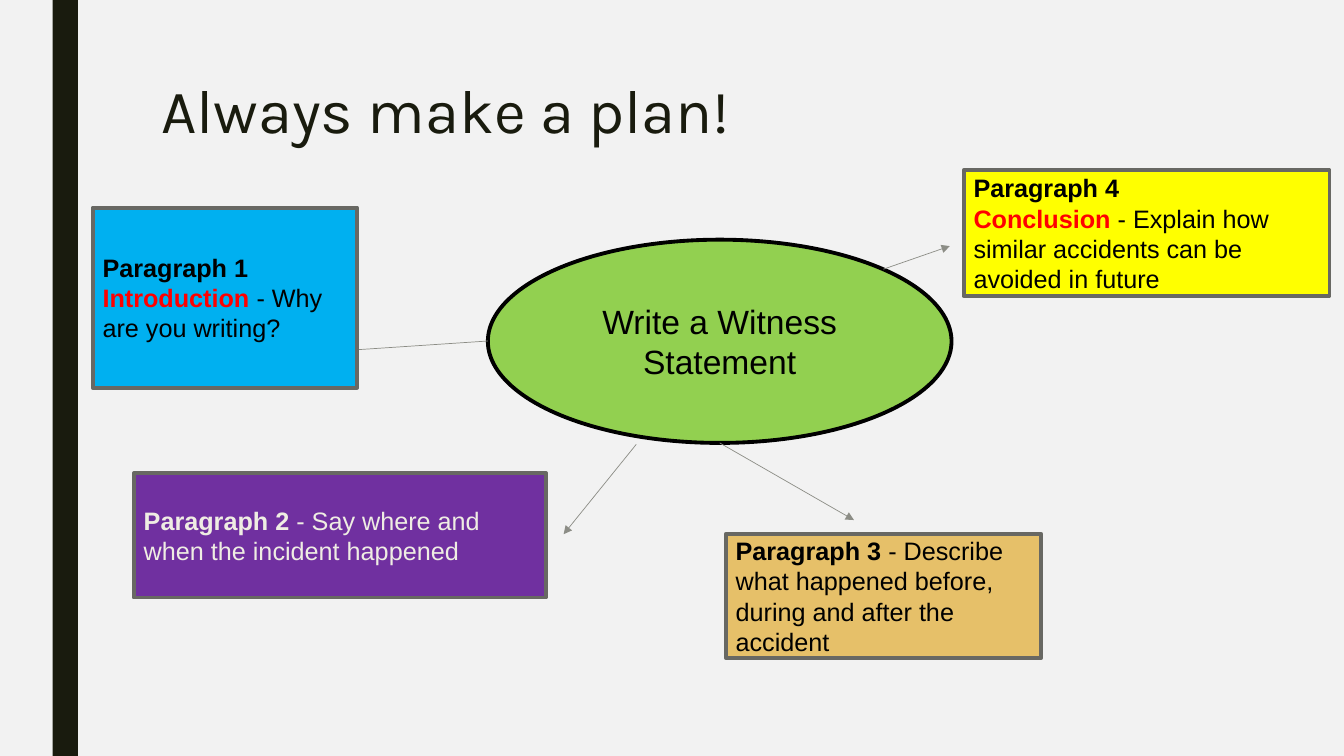
from dataclasses import dataclass

from lxml.etree import SubElement as Sub
from pptx import Presentation
from pptx.dml.color import RGBColor as Rgb
from pptx.enum.shapes import MSO_CONNECTOR as Conn, MSO_SHAPE as Form
from pptx.enum.text import MSO_ANCHOR as Anchor, MSO_AUTO_SIZE as Fit, PP_ALIGN as Align
from pptx.oxml.ns import qn
from pptx.slide import Slide
from pptx.text.text import TextFrame
from pptx.util import Pt

HUES = {
    "back": "F2F2F2", "dark": "191B0E", "black": "000000", "red": "FF0000",
    "cream": "EFEDE3", "edge": "686863", "link": "8C8D86", "green": "92D050",
    "purple": "7030A0", "yellow": "FFFF00", "sand": "E6C069", "blue": "00B0F0",
}


@dataclass
class Run:
    text: str
    hue: str = "black"
    bold: bool = False


@dataclass
class Box:
    area: tuple[float, float, float, float]
    fill: str
    lines: list[list[Run]]
    form: Form = Form.RECTANGLE
    edge: str | None = "edge"
    size: float = 18
    align: Align = Align.LEFT


@dataclass
class Link:
    start: tuple[float, float]
    end: tuple[float, float]


BAR = Box((37.6, 0, 18, 540), "dark", [], edge=None)
HUB = Box((348.5, 171.2, 331.2, 145.2), "green", [[Run("Write a Witness Statement")]],
          Form.OVAL, "black", 24, Align.CENTER)
LINKS = [
    Link((454.5, 317.4), (402.6, 381.6)),
    Link((631, 192.3), (678.5, 175.8)),
    Link((514.1, 316.4), (610, 371.5)),
    Link((348.5, 243.6), (222, 252)),
]
BOXES = [
    Box((95.6, 338, 294.4, 88.8), "purple", [
        [Run("Paragraph 2", "cream", True),
         Run(" - Say where and when the incident happened", "cream")]]),
    Box((688.3, 121.7, 261.4, 89.8), "yellow", [
        [Run("Paragraph 4", bold=True)],
        [Run("Conclusion ", "red", True),
         Run("- Explain how similar accidents can be avoided in future")]]),
    Box((518.4, 381.4, 225.4, 88.6), "sand", [
        [Run("Paragraph 3 ", bold=True),
         Run("- Describe what happened before, during and after the accident")]]),
    Box((66.2, 148.3, 188.9, 128.6), "blue", [
        [Run("Paragraph 1", bold=True)],
        [Run("Introduction ", "red", True), Run("- Why are you writing?")]]),
]


def tint(name: str) -> Rgb:
    return Rgb.from_string(HUES[name])


def write(frame: TextFrame, lines: list[list[Run]], face: str, size: float, align: Align) -> None:
    frame.word_wrap = True
    for i, line in enumerate(lines):
        para = frame.add_paragraph() if i else frame.paragraphs[0]
        para.alignment = align
        for part in line:
            run = para.add_run()
            run.text = part.text
            run.font.name = face
            run.font.size = Pt(size)
            run.font.bold = part.bold
            run.font.color.rgb = tint(part.hue)


def draw_box(slide: Slide, box: Box) -> None:
    shape = slide.shapes.add_shape(box.form, *map(Pt, box.area))
    shape.shadow.inherit = False
    shape.fill.solid()
    shape.fill.fore_color.rgb = tint(box.fill)
    if box.edge:
        shape.line.color.rgb = tint(box.edge)
        shape.line.width = Pt(2.75)
    else:
        shape.line.fill.background()
    shape.text_frame.vertical_anchor = Anchor.MIDDLE
    write(shape.text_frame, box.lines, "Arial", box.size, box.align)


def draw_link(slide: Slide, link: Link) -> None:
    line = slide.shapes.add_connector(Conn.STRAIGHT, *map(Pt, link.start + link.end))
    line.line.color.rgb = tint("link")
    line.line.width = Pt(0.5)
    props = line._element.spPr
    Sub(props.find(qn("a:ln")), qn("a:tailEnd"), type="triangle")
    Sub(props, qn("a:effectLst"))


def draw_title(slide: Slide, text: str) -> None:
    title = slide.shapes.title
    title.left, title.top, title.width, title.height = map(Pt, (108, 54, 756, 116.6))
    frame = title.text_frame
    frame.auto_size = Fit.NONE
    frame.vertical_anchor = Anchor.TOP
    write(frame, [[Run(text, "dark")]], "Karla", 44, Align.LEFT)
    frame.paragraphs[0].line_spacing = 0.89


def main() -> None:
    deck = Presentation()
    deck.slide_width, deck.slide_height = Pt(960), Pt(540)
    slide = deck.slides.add_slide(deck.slide_layouts[5])
    slide.background.fill.solid()
    slide.background.fill.fore_color.rgb = tint("back")
    draw_box(slide, BAR)
    draw_title(slide, "Always make a plan!")
    draw_box(slide, HUB)
    for link in LINKS:
        draw_link(slide, link)
    for box in BOXES:
        draw_box(slide, box)
    deck.save("out.pptx")


if __name__ == "__main__":
    main()
